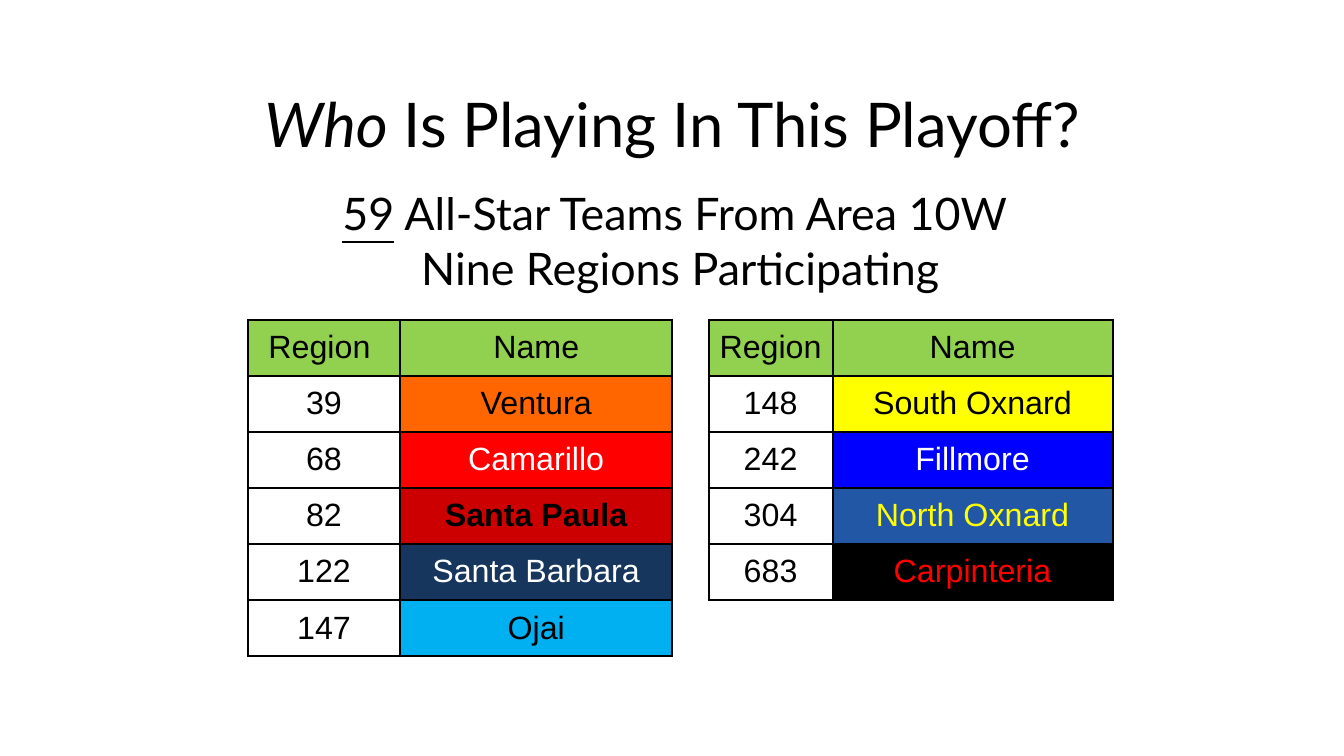
from lxml import etree
from pptx import Presentation
from pptx.dml.color import RGBColor
from pptx.enum.text import MSO_ANCHOR, PP_ALIGN
from pptx.oxml.ns import qn
from pptx.util import Pt

CENTER = PP_ALIGN.CENTER
MIDDLE = MSO_ANCHOR.MIDDLE
TOP = MSO_ANCHOR.TOP

BLACK, WHITE, GREEN, YELLOW, RED = "000000", "FFFFFF", "92D050", "FFFF00", "FF0000"
COLUMN_WIDTHS = [108.9, 194.4, 25.9, 88.6, 200]
ROW_HEIGHT = 40.05
SIDES = {"lnL": (0, -1), "lnR": (0, 1), "lnT": (-1, 0), "lnB": (1, 0)}

LEFT_REGIONS = [
    ("39", "Ventura", "FF6600", BLACK),
    ("68", "Camarillo", RED, WHITE),
    ("82", "Santa Paula", "CC0000", BLACK),
    ("122", "Santa Barbara", "17365D", WHITE),
    ("147", "Ojai", "00B0F0", BLACK),
]
RIGHT_REGIONS = [
    ("148", "South Oxnard", YELLOW, BLACK),
    ("242", "Fillmore", "0000FF", WHITE),
    ("304", "North Oxnard", "2257A6", YELLOW),
    ("683", "Carpinteria", BLACK, RED),
]
BOLD_NAMES = {"Santa Paula"}


def color(value):
    return RGBColor.from_string(value)


def add_heading(slide, box, lines, size, anchor):
    frame = slide.shapes.add_textbox(*map(Pt, box)).text_frame
    frame.word_wrap = True
    frame.vertical_anchor = anchor
    for index, runs in enumerate(lines):
        paragraph = frame.add_paragraph() if index else frame.paragraphs[0]
        paragraph.alignment = CENTER
        paragraph.line_spacing = 0.9
        if index:
            paragraph.space_before = Pt(5)
        paragraph.font.name = "Lato"
        paragraph.font.size = Pt(size)
        paragraph.font.color.rgb = color(BLACK)
        for text, style in runs:
            run = paragraph.add_run()
            run.text = text
            run.font.italic = style == "italic" or None
            run.font.underline = style == "underline" or None


def set_border(cell, side, visible):
    line = etree.SubElement(cell._tc.get_or_add_tcPr(), qn(f"a:{side}"), w=str(Pt(1.5)))
    if visible:
        fill = etree.SubElement(line, qn("a:solidFill"))
        etree.SubElement(fill, qn("a:srgbClr"), val=BLACK)
    else:
        etree.SubElement(line, qn("a:noFill"))


def fill_cell(cell, text, background, text_color):
    cell.fill.solid()
    cell.fill.fore_color.rgb = color(background)
    cell.vertical_anchor = MIDDLE
    cell.margin_left = cell.margin_right = Pt(5)
    cell.margin_top = cell.margin_bottom = 0
    paragraph = cell.text_frame.paragraphs[0]
    paragraph.text = text
    paragraph.alignment = CENTER
    paragraph.font.name = "Arial"
    paragraph.font.size = Pt(23)
    paragraph.font.bold = text in BOLD_NAMES
    paragraph.font.color.rgb = color(text_color)


def region_cells(regions, first_column):
    cells = {
        (0, first_column): ("Region" if first_column else "Region ", GREEN, BLACK),
        (0, first_column + 1): ("Name", GREEN, BLACK),
    }
    for row, (number, name, background, text_color) in enumerate(regions, 1):
        cells[row, first_column] = (number, WHITE, BLACK)
        cells[row, first_column + 1] = (name, background, text_color)
    return cells


def add_region_table(slide, left, top):
    cells = region_cells(LEFT_REGIONS, 0) | region_cells(RIGHT_REGIONS, 3)
    row_count = len(LEFT_REGIONS) + 1
    table = slide.shapes.add_table(
        row_count, len(COLUMN_WIDTHS), Pt(left), Pt(top),
        Pt(sum(COLUMN_WIDTHS)), Pt(row_count * ROW_HEIGHT),
    ).table
    table.first_row = table.horz_banding = False
    for column, width in zip(table.columns, COLUMN_WIDTHS):
        column.width = Pt(width)
    for row_index, row in enumerate(table.rows):
        row.height = Pt(ROW_HEIGHT)
        for column_index, cell in enumerate(row.cells):
            position = (row_index, column_index)
            for side, (down, across) in SIDES.items():
                neighbour = (row_index + down, column_index + across)
                set_border(cell, side, position in cells or neighbour in cells)
            if position in cells:
                fill_cell(cell, *cells[position])
            else:
                cell.fill.background()


def build_playoff_slide(presentation):
    slide = presentation.slides.add_slide(presentation.slide_layouts[6])
    title = [[("Who", "italic"), (" Is Playing In This Playoff? ", None)]]
    summary = [
        [("59", "underline"), (" All-Star Teams From Area 10W ", None)],
        [("Nine Regions Participating", None)],
    ]
    add_heading(slide, (168.5, 49.7, 635, 83.5), title, 44, MIDDLE)
    add_heading(slide, (168.5, 133.2, 635, 90), summary, 32, TOP)
    add_region_table(slide, 177, 228.3)


def main():
    presentation = Presentation()
    presentation.slide_width = Pt(960)
    presentation.slide_height = Pt(540)
    build_playoff_slide(presentation)
    presentation.save("out.pptx")


if __name__ == "__main__":
    main()
